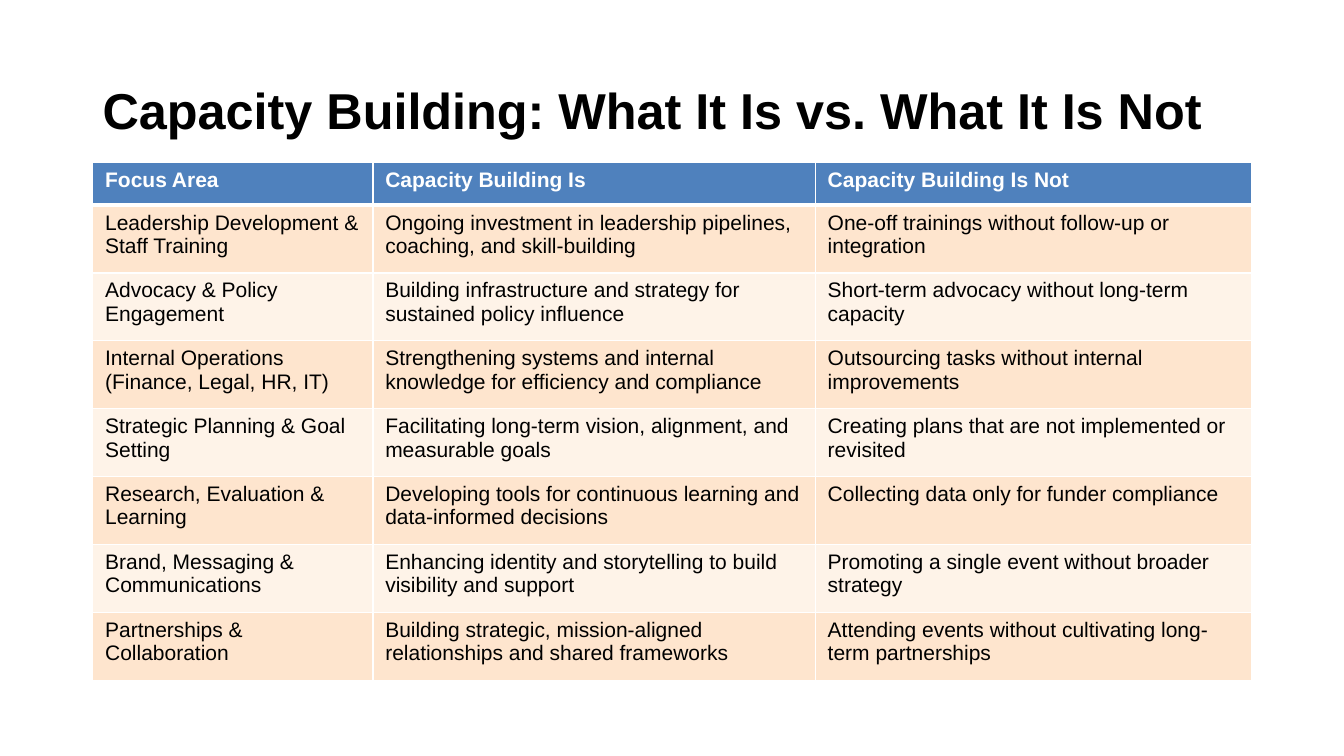
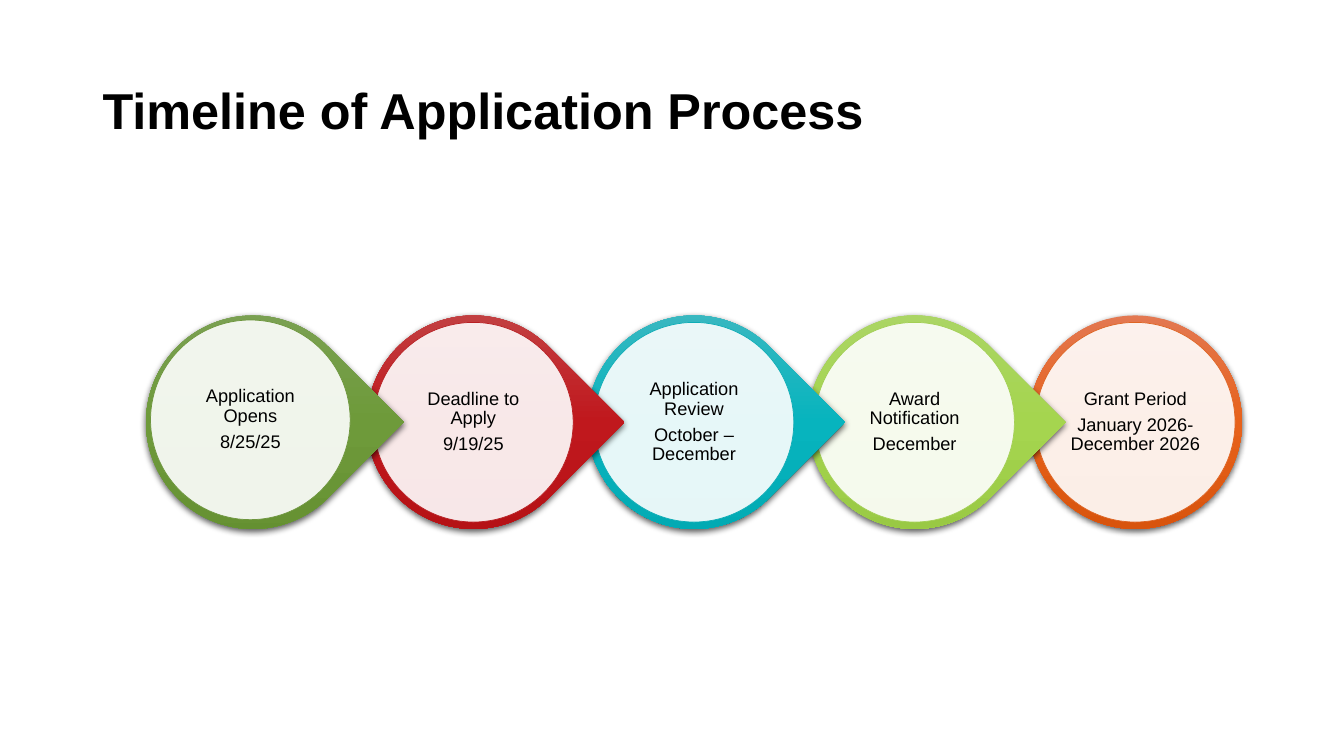
from dataclasses import dataclass

from lxml import etree
from pptx import Presentation
from pptx.dml.color import RGBColor
from pptx.enum.shapes import MSO_SHAPE
from pptx.enum.text import MSO_ANCHOR, MSO_AUTO_SIZE, PP_ALIGN
from pptx.oxml import parse_xml
from pptx.oxml.ns import qn
from pptx.util import Cm, Pt

LEFT, CENTER = PP_ALIGN.LEFT, PP_ALIGN.CENTER
MIDDLE = MSO_ANCHOR.MIDDLE
FIXED = MSO_AUTO_SIZE.NONE
OVAL, DROP = MSO_SHAPE.OVAL, MSO_SHAPE.TEAR
TITLE_ONLY = 5
NS = 'xmlns:a="http://schemas.openxmlformats.org/drawingml/2006/main"'


@dataclass(frozen=True)
class Theme:
    font: str = "Arial"
    ink: str = "000000"
    paper: str = "FFFFFF"
    head: str = "4F81BD"
    bands: tuple = ("FEE5CE", "FEF3E8")
    title: int = 36
    cell: int = 15
    step: int = 13


THEME = Theme()

ROWS = [
    ("Focus Area", "Capacity Building Is", "Capacity Building Is Not"),
    ("Leadership Development & Staff Training",
     "Ongoing investment in leadership pipelines, coaching, and skill-building",
     "One-off trainings without follow-up or integration"),
    ("Advocacy & Policy Engagement",
     "Building infrastructure and strategy for sustained policy influence",
     "Short-term advocacy without long-term capacity"),
    ("Internal Operations (Finance, Legal, HR, IT)",
     "Strengthening systems and internal knowledge for efficiency and compliance",
     "Outsourcing tasks without internal improvements"),
    ("Strategic Planning & Goal Setting",
     "Facilitating long-term vision, alignment, and measurable goals",
     "Creating plans that are not implemented or revisited"),
    ("Research, Evaluation & Learning",
     "Developing tools for continuous learning and data-informed decisions",
     "Collecting data only for funder compliance"),
    ("Brand, Messaging & Communications",
     "Enhancing identity and storytelling to build visibility and support",
     "Promoting a single event without broader strategy"),
    ("Partnerships & Collaboration",
     "Building strategic, mission-aligned relationships and shared frameworks",
     "Attending events without cultivating long-term partnerships"),
]

# Text lines, gradient from top to bottom, rim of the inner disc
STEPS = [
    (("Application Opens", "8/25/25"),
     ("7FA35C", "6E9A3A", "628D2F"), "6E963E"),
    (("Deadline to Apply", "9/19/25"),
     ("C34F50", "C0181D", "B10F13"), "B82024"),
    (("Application Review", "October –December"),
     ("4CB9C1", "07B4BE", "00A6AF"), "0FADB6"),
    (("Award Notification", "December"),
     ("ADD56D", "A5D54F", "94C43F"), "A3CF55"),
    (("Grant Period", "January 2026-December 2026"),
     ("E37851", "E7621B", "D8540D"), "DE6524"),
]


def rgb(code):
    return RGBColor.from_string(code)


def assign(item, values):
    for name, value in values.items():
        setattr(item, name, value)


class Deck:
    def __init__(self, theme):
        self.theme = theme
        self.show = Presentation()
        assign(self.show, {"slide_width": Cm(33.87), "slide_height": Cm(19.05)})
        self.slide = None

    def label(self, frame, lines, size, color, bold=False, para=None):
        """Fill a text frame with one paragraph for each line."""
        frame.text = "\n".join(lines)
        for item in frame.paragraphs:
            assign(item, para or {})
            assign(item.font, {"name": self.theme.font, "size": Pt(size), "bold": bold})
            item.font.color.rgb = rgb(color)

    def page(self, title):
        """Start a slide with its title."""
        self.slide = self.show.slides.add_slide(self.show.slide_layouts[TITLE_ONLY])
        box = self.slide.shapes.title
        assign(box, {"left": Cm(2.33), "top": Cm(1.8),
                     "width": Cm(29.21), "height": Cm(2.08)})
        assign(box.text_frame, {"vertical_anchor": MIDDLE, "word_wrap": True,
                                "auto_size": FIXED})
        self.label(box.text_frame, [title], self.theme.title, self.theme.ink, True,
                   {"alignment": LEFT, "line_spacing": 0.9})

    def edge(self, cell, foot):
        """Draw the cell borders, with the bottom one foot points wide."""
        props = cell._tc.get_or_add_tcPr()
        widths = {"L": 1, "R": 1, "T": 1, "B": foot}
        for spot, (side, width) in enumerate(widths.items()):
            props.insert(spot, parse_xml(
                f'<a:ln{side} {NS} w="{Pt(width)}"><a:solidFill>'
                f'<a:srgbClr val="{self.theme.paper}"/></a:solidFill></a:ln{side}>'))

    def table(self, rows, left, top, widths, heights):
        theme = self.theme
        grid = self.slide.shapes.add_table(
            len(rows), len(widths), Cm(left), Cm(top),
            Cm(sum(widths)), Cm(sum(heights))).table
        for col, width in zip(grid.columns, widths):
            col.width = Cm(width)
        for num, (row, height, texts) in enumerate(zip(grid.rows, heights, rows)):
            row.height = Cm(height)
            head = num == 0
            fill = theme.head if head else theme.bands[(num - 1) % 2]
            for cell, text in zip(row.cells, texts):
                assign(cell, {"margin_left": Cm(0.31), "margin_right": Cm(0.31),
                              "margin_top": Cm(0.15), "margin_bottom": Cm(0.15)})
                cell.fill.solid()
                cell.fill.fore_color.rgb = rgb(fill)
                self.edge(cell, 3 if head else 1)
                self.label(cell.text_frame, [text], theme.cell,
                           theme.paper if head else theme.ink, head)

    def shape(self, kind, left, top, size, fill):
        item = self.slide.shapes.add_shape(kind, Cm(left), Cm(top), Cm(size), Cm(size))
        item.shadow.inherit = False
        item.fill.solid()
        item.fill.fore_color.rgb = rgb(fill)
        return item

    def drop(self, kind, left, top, size, shades):
        """Place a shaded, shadowed shape; a teardrop points right."""
        item = self.shape(kind, left, top, size, shades[1])
        item.rotation = 45 if kind == DROP else 0
        item.line.fill.background()
        props = item._element.spPr
        stops = "".join(
            f'<a:gs pos="{num * 50000}"><a:srgbClr val="{shade}"/></a:gs>'
            for num, shade in enumerate(shades))
        props.replace(props.find(qn("a:solidFill")), parse_xml(
            f'<a:gradFill {NS} rotWithShape="0"><a:gsLst>{stops}</a:gsLst>'
            '<a:lin ang="5400000" scaled="0"/></a:gradFill>'))
        props.find(qn("a:effectLst")).append(parse_xml(
            f'<a:outerShdw {NS} blurRad="{Pt(4.5)}" dist="{Pt(1.5)}" dir="5400000" '
            f'rotWithShape="0"><a:srgbClr val="{self.theme.ink}">'
            '<a:alpha val="63000"/></a:srgbClr></a:outerShdw>'))

    def disc(self, left, top, size, lines, rim):
        """Place a nearly opaque circle that holds the step's text."""
        theme = self.theme
        item = self.shape(OVAL, left, top, size, theme.paper)
        tint = item._element.spPr.find(qn("a:solidFill"))[0]
        etree.SubElement(tint, qn("a:alpha")).set("val", "90000")
        item.line.color.rgb = rgb(rim)
        item.line.width = Pt(0.5)
        inset = Cm(0.05)
        assign(item.text_frame, {
            "margin_left": inset, "margin_right": inset, "margin_top": inset,
            "margin_bottom": inset, "vertical_anchor": MIDDLE, "word_wrap": True})
        self.label(item.text_frame, lines, theme.step, theme.ink, para={
            "alignment": CENTER, "line_spacing": 0.9, "space_after": Pt(4.5)})


def focus(deck):
    deck.page("Capacity Building: What It Is vs. What It Is Not")
    deck.table(ROWS, 2.34, 4.1, (7.06, 11.15, 11),
               [1.07] + [1.71] * (len(ROWS) - 1))


def timeline(deck):
    deck.page("Timeline of Application Process")
    left, top, pitch = 3.68, 7.95, 5.56
    outer, inner = 5.38, 5.03
    gap = (outer - inner) / 2
    last = len(STEPS) - 1
    # Later steps lie behind, so each tip overlaps the next circle
    for num, (lines, shades, rim) in reversed(list(enumerate(STEPS))):
        spot = left + num * pitch
        shift = 0.06 if num == 0 else 0
        deck.drop(OVAL if num == last else DROP, spot, top, outer, shades)
        deck.disc(spot + gap - shift, top + gap - shift, inner, lines, rim)


def main():
    deck = Deck(THEME)
    focus(deck)
    timeline(deck)
    deck.show.save("out.pptx")


if __name__ == "__main__":
    main()
